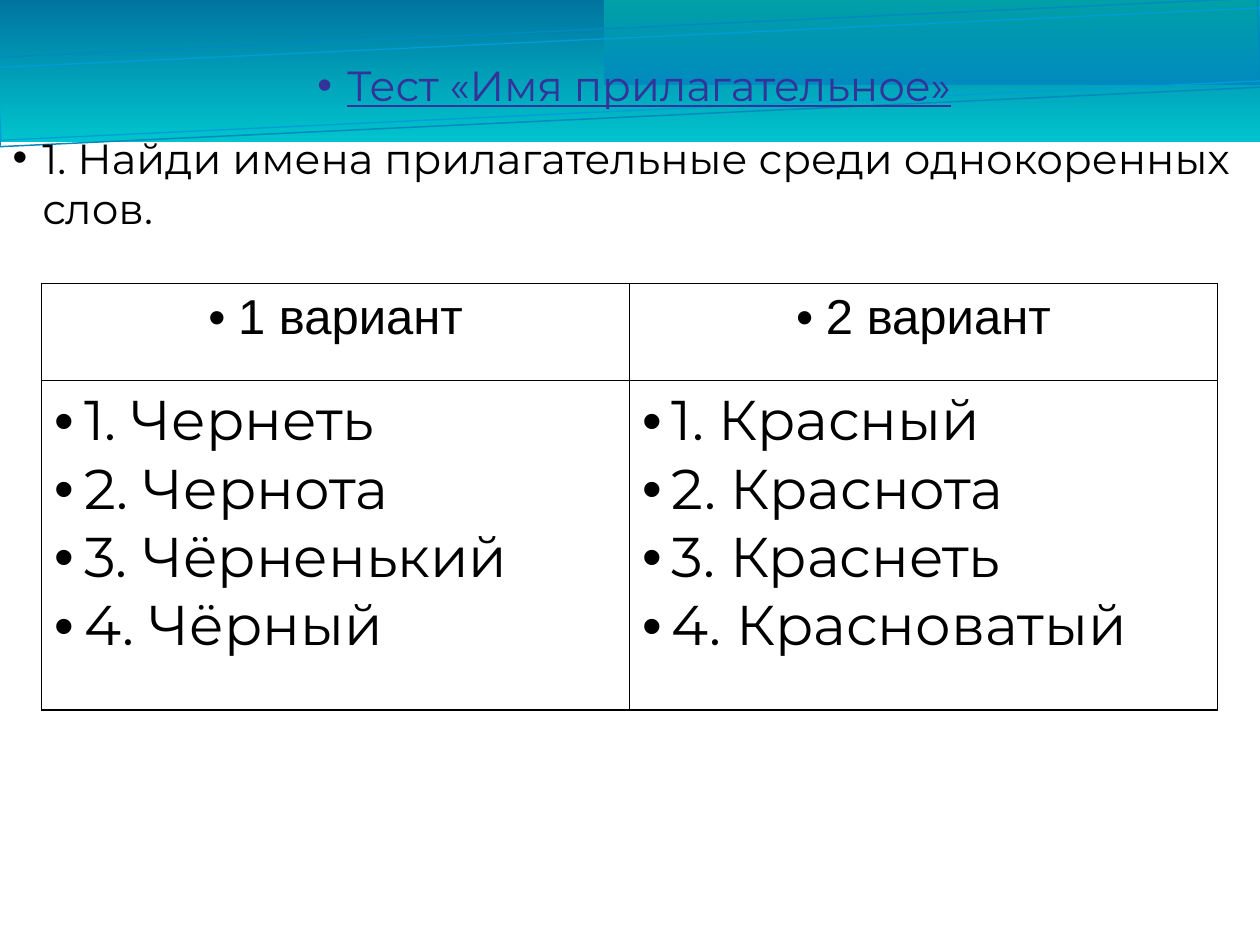
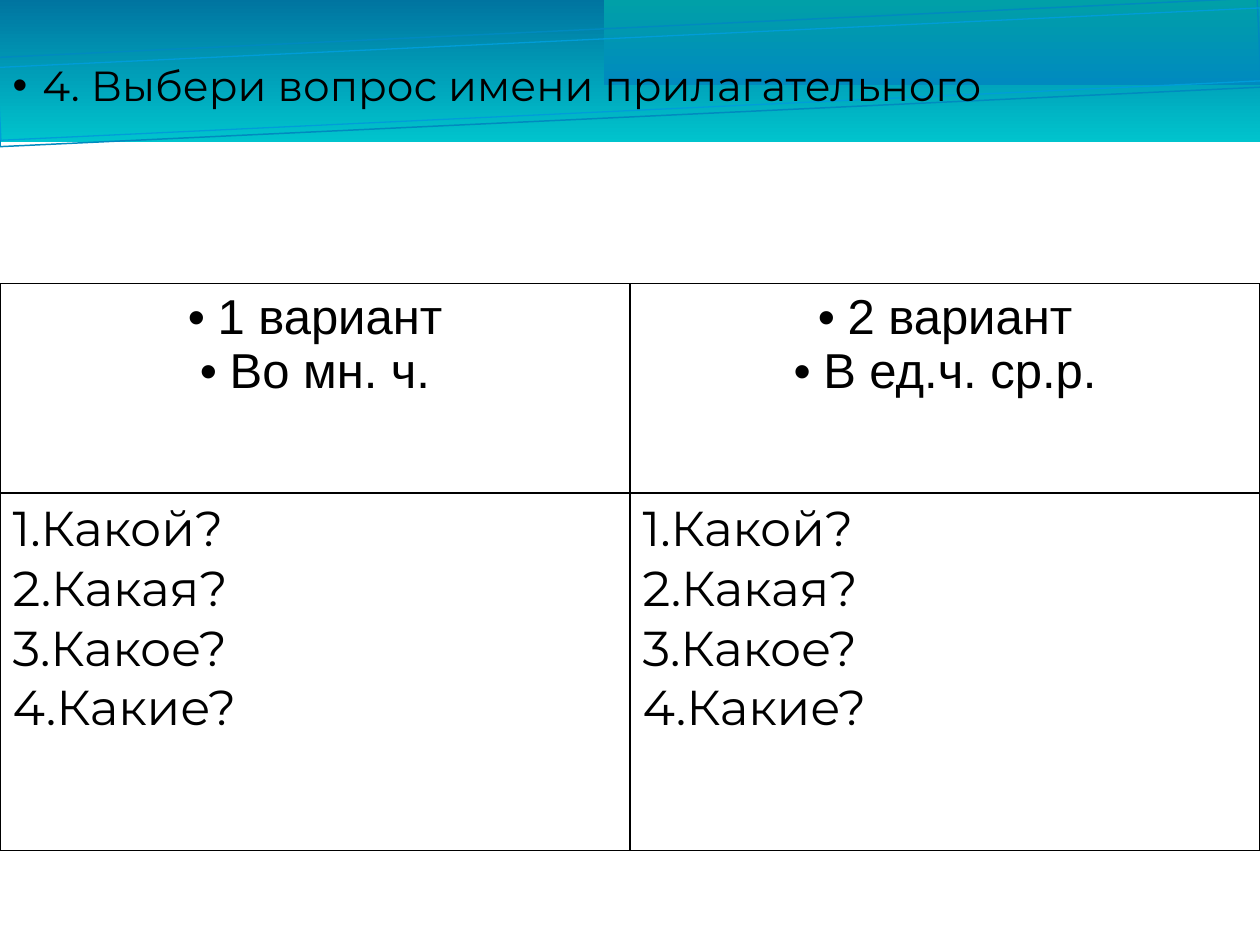
from dataclasses import dataclass

from lxml import etree
from pptx import Presentation
from pptx.dml import color
from pptx.enum import shapes, text
from pptx.oxml import ns
from pptx.util import Cm, Pt

COLORS = {
    "band_top": "0074A0", "band_bottom": "00C4CD",
    "panel_top": "00A0A8", "panel_bottom": "008ABF",
    "outer_line": "008ABF", "inner_line": "009DD9",
    "heading": "333399", "ink": "000000",
}
HANG = Cm(0.6)
ANSWER_FONT = "Montserrat"
HEADER_FONT = "Arial"


@dataclass(frozen=True)
class Box:
    left: float
    top: float
    width: float
    height: float

    def lengths(self):
        return Cm(self.left), Cm(self.top), Cm(self.width), Cm(self.height)


@dataclass(frozen=True)
class Band:
    box: Box
    top_color: str
    bottom_color: str


@dataclass(frozen=True)
class Outline:
    box: Box
    line_color: str
    weight: float


@dataclass(frozen=True)
class TextStyle:
    size: int
    font: str = ANSWER_FONT
    ink: str = "ink"
    centered: bool = False
    underline: bool = False
    numbered: bool = False


@dataclass(frozen=True)
class Variant:
    header: list[str]
    answers: list[str]


@dataclass(frozen=True)
class Quiz:
    box: Box
    header_height: float
    answer_style: TextStyle
    variants: list[Variant]


BANDS = [
    Band(Box(-0.03, -0.03, 25.45, 2.9), "band_top", "band_bottom"),
    Band(Box(12.17, -0.03, 13.23, 1.75), "panel_top", "panel_bottom"),
]
OUTLINES = [
    Outline(Box(-0.05, 0.56, 25.45, 1.8), "outer_line", 0.85),
    Outline(Box(-0.03, 0.76, 25.48, 1.47), "inner_line", 0.75),
]
HEADING = TextStyle(24, ink="heading", centered=True, underline=True)
TASK = TextStyle(24)
HEADER = TextStyle(28, HEADER_FONT, centered=True)

QUESTIONS = ["Какой?", "Какая?", "Какое?", "Какие?"]
WORD_QUIZ = Quiz(
    Box(0.84, 5.72, 23.7, 8.59), 1.95, TextStyle(32),
    [
        Variant(["1 вариант"],
                ["1. Чернеть", "2. Чернота", "3. Чёрненький", "4. Чёрный"]),
        Variant(["2 вариант"],
                ["1. Красный", "2. Краснота", "3. Краснеть", "4. Красноватый"]),
    ],
)
QUESTION_QUIZ = Quiz(
    Box(0, 5.72, 25.4, 11.43), 4.22, TextStyle(28, numbered=True),
    [
        Variant(["1 вариант", "Во мн. ч."], QUESTIONS),
        Variant(["2 вариант", "В ед.ч. ср.р."], QUESTIONS),
    ],
)


def rgb(key: str) -> color.RGBColor:
    return color.RGBColor.from_string(COLORS[key])


def add_child(parent, tag: str, **attributes: str):
    return etree.SubElement(parent, ns.qn(tag), attributes)


def set_bullet(paragraph, numbered: bool) -> None:
    properties = paragraph._p.get_or_add_pPr()
    hang = 0 if numbered else HANG
    properties.set("marL", str(hang))
    properties.set("indent", str(-hang))
    add_child(properties, "a:buFont",
              typeface=ANSWER_FONT if numbered else HEADER_FONT)
    if numbered:
        add_child(properties, "a:buAutoNum", type="arabicPeriod")
    else:
        add_child(properties, "a:buChar", char="•")


def write(frame, lines: list[str], style: TextStyle) -> None:
    frame.text = "\n".join(lines)
    for paragraph in frame.paragraphs:
        set_bullet(paragraph, style.numbered)
        paragraph.alignment = (text.PP_ALIGN.CENTER if style.centered
                               else text.PP_ALIGN.LEFT)
        paragraph.space_before = Pt(0)
        font = paragraph.font
        font.name = style.font
        font.size = Pt(style.size)
        font.underline = style.underline
        font.color.rgb = rgb(style.ink)


def fill_placeholder(holder, box: Box, line: str, style: TextStyle) -> None:
    holder.left, holder.top, holder.width, holder.height = box.lengths()
    frame = holder.text_frame
    frame.word_wrap = True
    frame.auto_size = text.MSO_AUTO_SIZE.NONE
    frame.vertical_anchor = text.MSO_ANCHOR.TOP
    write(frame, [line], style)


def add_rectangle(slide, box: Box):
    rectangle = slide.shapes.add_shape(
        shapes.MSO_SHAPE.RECTANGLE, *box.lengths())
    rectangle.shadow.inherit = False
    return rectangle


def add_band(slide, band: Band):
    rectangle = add_rectangle(slide, band.box)
    rectangle.line.fill.background()
    rectangle.fill.gradient()
    rectangle.fill.gradient_angle = 270
    for stop, key in zip(rectangle.fill.gradient_stops,
                         (band.top_color, band.bottom_color)):
        stop.color.rgb = rgb(key)
    return rectangle


def add_outline(slide, outline: Outline):
    rectangle = add_rectangle(slide, outline.box)
    rectangle.rotation = 357.3
    rectangle.fill.background()
    rectangle.line.color.rgb = rgb(outline.line_color)
    rectangle.line.width = Pt(outline.weight)
    return rectangle


def decorate_master(master, slide) -> None:
    decor = [add_band(slide, band) for band in BANDS]
    decor += [add_outline(slide, outline) for outline in OUTLINES]
    for position, shape in enumerate(decor, start=2):
        master.shapes.element.insert(position, shape.element)


def set_borders(cell) -> None:
    properties = cell._tc.get_or_add_tcPr()
    for position, side in enumerate(("lnL", "lnR", "lnT", "lnB")):
        border = etree.Element(ns.qn(f"a:{side}"), w=str(Pt(1)))
        fill = add_child(border, "a:solidFill")
        add_child(fill, "a:srgbClr", val=COLORS["ink"])
        properties.insert(position, border)


def add_quiz(slide, quiz: Quiz) -> None:
    table = slide.shapes.add_table(
        2, len(quiz.variants), *quiz.box.lengths()).table
    table.first_row = False
    table.horz_banding = False
    table.rows[0].height = Cm(quiz.header_height)
    table.rows[1].height = Cm(quiz.box.height - quiz.header_height)
    for column, variant in enumerate(quiz.variants):
        parts = ((variant.header, HEADER), (variant.answers, quiz.answer_style))
        for row, (lines, style) in enumerate(parts):
            cell = table.cell(row, column)
            write(cell.text_frame, lines, style)
            cell.fill.background()
            set_borders(cell)


def main() -> None:
    deck = Presentation()
    deck.slide_width, deck.slide_height = Cm(25.4), Cm(19.05)
    title_and_body, title_only = deck.slide_layouts[1], deck.slide_layouts[5]

    words = deck.slides.add_slide(title_and_body)
    decorate_master(deck.slide_master, words)
    fill_placeholder(words.shapes.title, Box(1.47, 1.07, 22.63, 1.27),
                     "Тест «Имя прилагательное»", HEADING)
    fill_placeholder(words.placeholders[1], Box(0, 2.54, 25.4, 2.29),
                     "1. Найди имена прилагательные среди однокоренных слов.",
                     TASK)
    add_quiz(words, WORD_QUIZ)

    questions = deck.slides.add_slide(title_only)
    fill_placeholder(questions.shapes.title, Box(0, 1.07, 25.4, 1.27),
                     "4. Выбери вопрос имени прилагательного", TASK)
    add_quiz(questions, QUESTION_QUIZ)

    deck.save("out.pptx")


if __name__ == "__main__":
    main()
